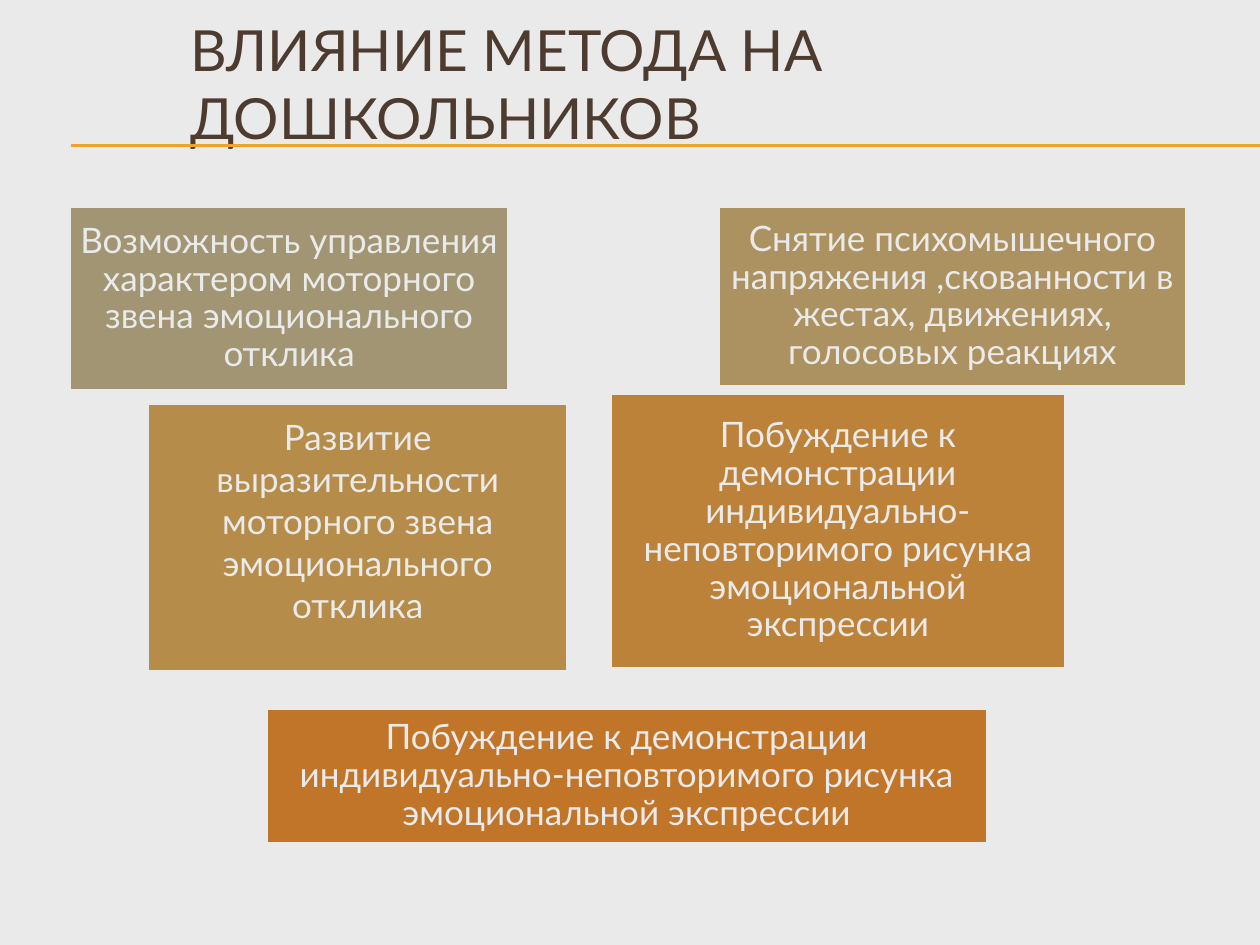
import pptx
import pptx.util
import pptx.dml.color
import pptx.enum.shapes
import pptx.enum.text
import pptx.oxml
import pptx.oxml.ns
from pptx.util import Inches

THEME = {
    "font": "Lato",
    "paper": "EAEAEA",
    "title": "4E3B30",
    "rule": "F0A22E",
    "title_size": 32.4,
    "body_size": 20,
    "inset": 0.08,
}

TITLE = "ВЛИЯНИЕ МЕТОДА НА ДОШКОЛЬНИКОВ"
EXPRESSION = ("Побуждение к демонстрации индивидуально-неповторимого "
              "рисунка эмоциональной экспрессии")

# Text, (left, top, width, height), fill, line spacing, bottom inset
EFFECTS = [
    ("Возможность управления характером моторного звена эмоционального отклика",
     (0.55, 1.64, 3.49, 1.46), "A19574", 0.9, THEME["inset"]),
    ("Снятие психомышечного напряжения ,скованности в жестах, движениях, "
     "голосовых реакциях",
     (5.7, 1.64, 3.72, 1.43), "AB9260", 0.9, THEME["inset"]),
    ("Развитие выразительности моторного звена эмоционального отклика",
     (1.17, 3.2, 3.34, 2.13), "B58C4A", 1.0, 0.35),
    (EXPRESSION, (4.84, 3.12, 3.62, 2.19), "BC8239", 0.9, THEME["inset"]),
    (EXPRESSION, (2.11, 5.62, 5.73, 1.08), "C17529", 0.9, THEME["inset"]),
]

RULE_LEFT, RULE_RIGHT = 0.56, 10
RULE_HEIGHTS = (1.15, 1.16)


def color(value):
    return pptx.dml.color.RGBColor.from_string(value)


def write(shape, text, *, size, ink, align, spacing=1.0):
    frame = shape.text_frame
    frame.word_wrap = True
    frame.auto_size = pptx.enum.text.MSO_AUTO_SIZE.NONE
    frame.vertical_anchor = pptx.enum.text.MSO_ANCHOR.MIDDLE
    para = frame.paragraphs[0]
    para.alignment = align
    para.line_spacing = spacing
    para.space_before = pptx.util.Pt(0)
    span = para.add_run()
    span.text = text
    span.font.name = THEME["font"]
    span.font.size = pptx.util.Pt(size)
    span.font.color.rgb = color(ink)
    return frame


def add_rule(page, height):
    rule = page.shapes.add_connector(
        pptx.enum.shapes.MSO_CONNECTOR.STRAIGHT,
        Inches(RULE_LEFT), Inches(height), Inches(RULE_RIGHT), Inches(height))
    rule.line.color.rgb = color(THEME["rule"])
    rule.line.width = pptx.util.Pt(0.75)
    properties = rule._element.spPr
    properties.append(pptx.oxml.parse_xml(
        "<a:effectLst %s/>" % pptx.oxml.ns.nsdecls("a")))


def add_effect(page, text, place, fill, spacing, bottom):
    box = page.shapes.add_shape(pptx.enum.shapes.MSO_SHAPE.RECTANGLE,
                                *map(Inches, place))
    box.shadow.inherit = False
    box.fill.solid()
    box.fill.fore_color.rgb = color(fill)
    box.line.color.rgb = color(THEME["paper"])
    box.line.width = pptx.util.Pt(2)
    frame = write(box, text, size=THEME["body_size"], ink=THEME["paper"],
                  align=pptx.enum.text.PP_ALIGN.CENTER, spacing=spacing)
    frame.margin_left = frame.margin_right = Inches(THEME["inset"])
    frame.margin_top = Inches(THEME["inset"])
    frame.margin_bottom = Inches(bottom)


def main():
    deck = pptx.Presentation()
    deck.slide_width, deck.slide_height = Inches(10), Inches(7.5)
    page = deck.slides.add_slide(deck.slide_layouts.get_by_name("Title Only"))
    page.background.fill.solid()
    page.background.fill.fore_color.rgb = color(THEME["paper"])

    # Title
    title = page.shapes.title
    title.left, title.top = Inches(1.41), Inches(0.3)
    title.width, title.height = Inches(8.59), Inches(0.72)
    write(title, TITLE, size=THEME["title_size"], ink=THEME["title"],
          align=pptx.enum.text.PP_ALIGN.LEFT)

    # Double rule under the title
    for height in RULE_HEIGHTS:
        add_rule(page, height)

    # Effects of the method
    for effect in EFFECTS:
        add_effect(page, *effect)

    deck.save("out.pptx")


if __name__ == "__main__":
    main()
